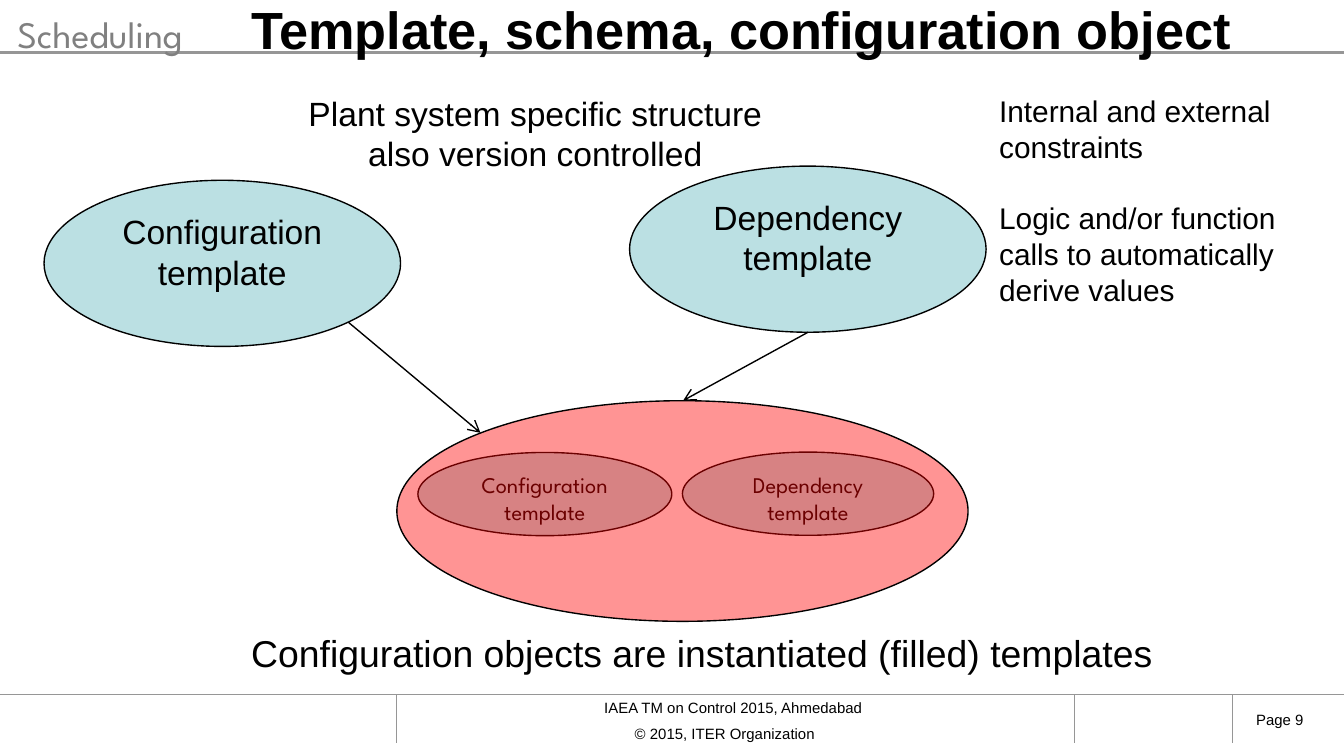
import pptx
import pptx.util
import pptx.dml.color
import pptx.enum.shapes
import pptx.enum.text
import pptx.oxml.ns
import lxml.etree

Pt = pptx.util.Pt
ALIGN = pptx.enum.text.PP_ALIGN
ANCHOR = pptx.enum.text.MSO_ANCHOR
qn = pptx.oxml.ns.qn

COLORS = {"ink": "000000", "rule": "969696", "muted": "808080",
          "template": "BBE0E3", "object": "FF0000"}
PAGE_WIDTH, PAGE_HEIGHT = 720, 405
INSETS = (7.2, 3.6)  # horizontal, vertical
SANS, ROUNDED = "Arial", "League Spartan"

# Frame rules: start, end, width
FOOTER_TOP, FOOTER_BOTTOM = 372.2, 398.2
RULES = [((0, 28.1), (PAGE_WIDTH, 28.1), 1.25),
         ((0, FOOTER_TOP), (PAGE_WIDTH, FOOTER_TOP), 0.5)]
RULES += [((x, FOOTER_TOP), (x, FOOTER_BOTTOM), 0.5) for x in (660.2, 575.6, 212.4)]

# Ellipses: label, (left, top, width, height), size, font
TEMPLATES = [
    ("Configuration template", (23.6, 96.6, 191, 89), 18, SANS),
    ("Dependency template", (337.3, 89, 191, 89), 18, SANS),
    ("Configuration template", (223.9, 242.4, 136, 44.6), 12, ROUNDED),
    ("Dependency template", (365.6, 242.2, 134.6, 44.6), 12, ROUNDED),
]
CONFIGURATION_OBJECT = (212.6, 214.7, 306, 118.2)
ARROWS = [((186.7, 172.7), (257.4, 231.9)), ((432.9, 178), (366, 214.6))]

# Text boxes: paragraphs, place, size, then options
TEXTS = [
    (["IAEA TM on Control 2015, Ahmedabad ", "© 2015, ITER Organization\t"],
     (212.4, 373.8, 363.2, 24.4), 8,
     dict(align=ALIGN.CENTER, anchor=ANCHOR.MIDDLE, gap=4.7, insets=(2.9, 0))),
    (["Page 9"], (665.8, 377, 46.4, 17), 8, dict(anchor=ANCHOR.MIDDLE)),
    (["Template, schema, configuration object"], (82, -2, 630, 34.6), 28,
     dict(align=ALIGN.CENTER, anchor=ANCHOR.MIDDLE, bold=True)),
    (["Configuration objects are instantiated (filled) templates"],
     (127.5, 334.3, 501, 31.5), 20, dict(wrap=False)),
    (["Plant system specific structure", "also version controlled"],
     (156.8, 46, 260, 51), 18, dict(align=ALIGN.CENTER, wrap=False)),
    (["Internal and external constraints",
      "Logic and/or function calls to automatically derive values"],
     (528.2, 46, 191.8, 181.6), 16, dict(gap=19.2)),
    (["Scheduling"], (2.2, 2.7, 123, 31.5), 20,
     dict(font=ROUNDED, color="muted", wrap=False)),
]


def rgb(name):
    return pptx.dml.color.RGBColor.from_string(COLORS[name])


def write(shape, lines, size, font=SANS, color="ink", align=ALIGN.LEFT,
          anchor=ANCHOR.TOP, gap=0, insets=INSETS, bold=False, wrap=True):
    frame = shape.text_frame
    frame.text = "\n".join(lines)
    frame.word_wrap = wrap
    frame.vertical_anchor = anchor
    frame.margin_left = frame.margin_right = Pt(insets[0])
    frame.margin_top = frame.margin_bottom = Pt(insets[1])
    for number, para in enumerate(frame.paragraphs):
        para.alignment = align
        para.space_before = Pt(gap if number else 0)
        for span in para.runs:
            span.font.name, span.font.size, span.font.bold = font, Pt(size), bold
            span.font.color.rgb = rgb(color)


def add_line(page, start, end, width, color, arrow=False):
    line = page.shapes.add_connector(
        pptx.enum.shapes.MSO_CONNECTOR.STRAIGHT, *map(Pt, start + end))
    line.line.color.rgb = rgb(color)
    line.line.width = Pt(width)
    if arrow:
        lxml.etree.SubElement(line.line._get_or_add_ln(), qn("a:tailEnd"), type="arrow")
    lxml.etree.SubElement(line._element.spPr, qn("a:effectLst"))


def add_ellipse(page, place, color):
    ellipse = page.shapes.add_shape(
        pptx.enum.shapes.MSO_SHAPE.OVAL, *map(Pt, place))
    ellipse.shadow.inherit = False
    ellipse.fill.solid()
    ellipse.fill.fore_color.rgb = rgb(color)
    ellipse.line.color.rgb = rgb("ink")
    ellipse.line.width = Pt(0.75)
    return ellipse


deck = pptx.Presentation()
deck.slide_width, deck.slide_height = Pt(PAGE_WIDTH), Pt(PAGE_HEIGHT)
page = deck.slides.add_slide(deck.slide_layouts[6])

# Header and footer rules
for start, end, width in RULES:
    add_line(page, start, end, width, "rule")

# Templates, then the translucent object that covers the inner pair
for label, place, size, font in TEMPLATES:
    write(add_ellipse(page, place, "template"), [label], size, font,
          align=ALIGN.CENTER)
instance = add_ellipse(page, CONFIGURATION_OBJECT, "object")
tint = instance._element.spPr.find(qn("a:solidFill"))[0]
lxml.etree.SubElement(tint, qn("a:alpha"), val="42000")

# Text boxes
for lines, place, size, options in TEXTS:
    box = page.shapes.add_textbox(*map(Pt, place))
    write(box, lines, size, **options)

# Arrows from templates to object
for start, end in ARROWS:
    add_line(page, start, end, 0.75, "ink", arrow=True)

deck.save("out.pptx")
